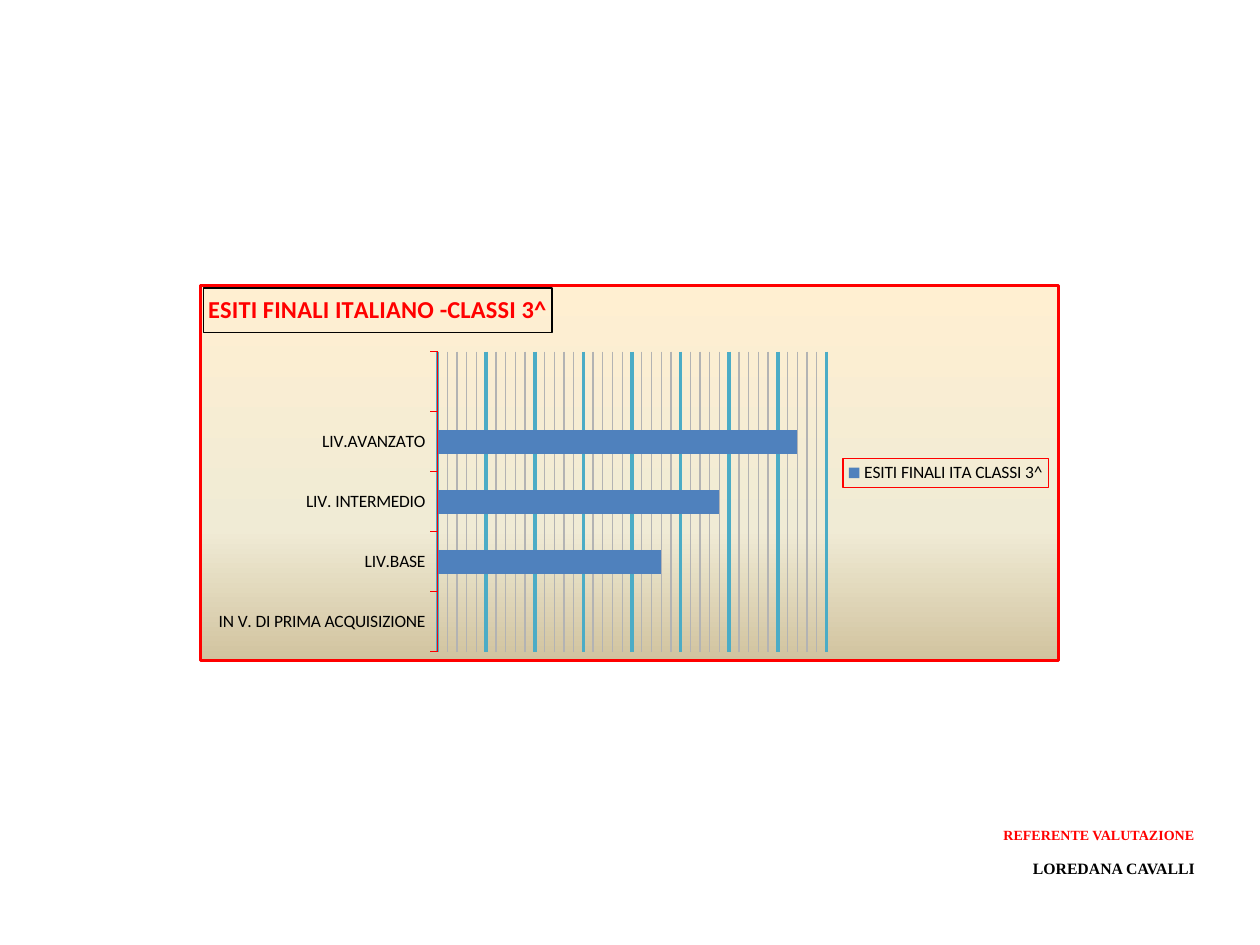
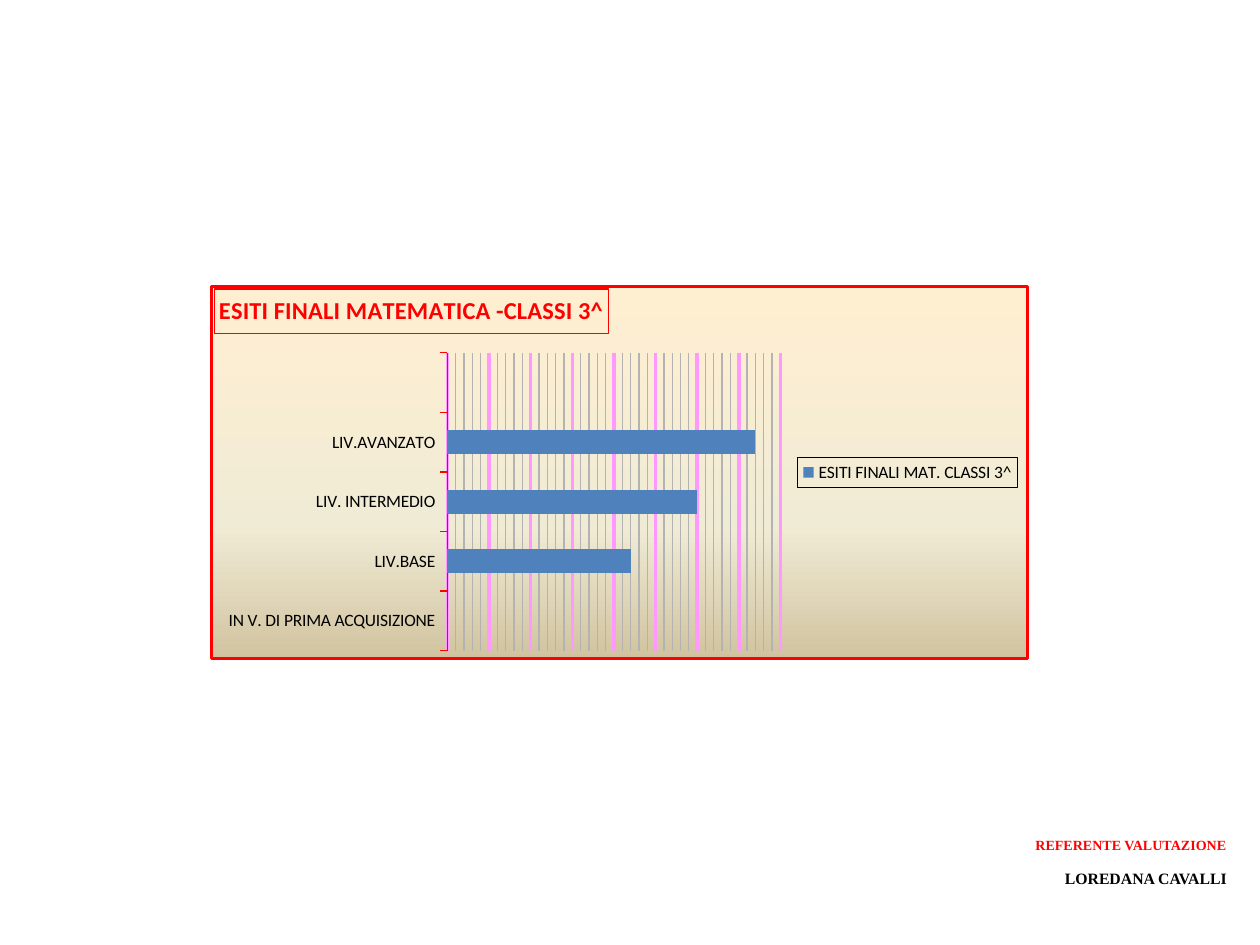
from lxml.etree import SubElement
from pptx import Presentation
from pptx.chart.data import CategoryChartData
from pptx.dml.color import RGBColor
from pptx.enum.chart import XL_CHART_TYPE, XL_LEGEND_POSITION, XL_TICK_LABEL_POSITION, XL_TICK_MARK
from pptx.enum.text import MSO_AUTO_SIZE, PP_ALIGN
from pptx.oxml import parse_xml
from pptx.oxml.ns import nsdecls, qn
from pptx.util import Emu, Pt

PX = 914400 / 126
RED = RGBColor(0xFF, 0x00, 0x00)
BLACK = RGBColor(0x00, 0x00, 0x00)
BLUE = RGBColor(0x4F, 0x81, 0xBD)
TEAL = RGBColor(0x4B, 0xAC, 0xC6)
PINK = RGBColor(0xFF, 0x99, 0xFF)
GREY = RGBColor(0xB3, 0xB3, 0xB3)
CREAM = RGBColor(0xFF, 0xEF, 0xD1)
IVORY = RGBColor(0xF0, 0xEB, 0xD5)
SAND = RGBColor(0xD1, 0xC3, 0x9F)
PANEL_STOPS = [(0, CREAM), (65, IVORY), (100, SAND)]

CHART_FONT = "Calibri"
FOOTER_FONT = "Times New Roman"
# The last, unnamed level leaves an empty row at the top
LEVELS = ["IN V. DI PRIMA ACQUISIZIONE", "LIV.BASE", "LIV. INTERMEDIO", "LIV.AVANZATO", ""]
FOOTER = [("REFERENTE VALUTAZIONE", 8, RED), ("LOREDANA CAVALLI", 9, BLACK)]


def emu(*lengths):
    return [Emu(round(length * PX)) for length in lengths]


def style_line(line, color, width):
    line.color.rgb = color
    line.width = Pt(width)


def shape_properties(fill, border, width):
    return parse_xml(
        f'<c:spPr {nsdecls("c", "a")}>{fill}<a:ln w="{Pt(width)}"><a:solidFill>'
        f'<a:srgbClr val="{border}"/></a:solidFill></a:ln></c:spPr>')


def manual_layout(parent, position, **values):
    """Place a chart part by fractions of the chart area."""
    for layout in parent.findall(qn("c:layout")):
        parent.remove(layout)
    layout = parse_xml(f'<c:layout {nsdecls("c")}><c:manualLayout/></c:layout>')
    for tag, value in values.items():
        SubElement(layout[0], qn(f"c:{tag}")).set("val", str(value))
    parent.insert(position, layout)


class Deck:
    def __init__(self):
        self.presentation = Presentation()
        self.presentation.slide_width, self.presentation.slide_height = emu(1260, 945)
        self.slide = None

    def new_slide(self):
        self.slide = self.presentation.slides.add_slide(self.presentation.slide_layouts[6])

    def results_chart(self, box, plot_box, title, series_name, values,
                      grid_color, title_border, legend_border):
        data = CategoryChartData()
        data.categories = LEVELS
        data.add_series(series_name, values + [None])
        chart = self.slide.shapes.add_chart(
            XL_CHART_TYPE.BAR_CLUSTERED, *emu(*box), data).chart
        chart.font.name, chart.font.size = CHART_FONT, Pt(10)
        chart.font.color.rgb = BLACK

        # Bars
        plot = chart.plots[0]
        plot.gap_width = 150
        plot.vary_by_categories = False
        fill = plot.series[0].format.fill
        fill.solid()
        fill.fore_color.rgb = BLUE

        # Axes and gridlines
        levels = chart.category_axis
        levels.major_tick_mark = XL_TICK_MARK.OUTSIDE
        levels.tick_label_position = XL_TICK_LABEL_POSITION.NEXT_TO_AXIS
        style_line(levels.format.line, RED, 0.75)
        scale = chart.value_axis
        scale.minimum_scale, scale.maximum_scale = 0, 40
        scale.major_unit, scale.minor_unit = 5, 1
        scale.has_major_gridlines = scale.has_minor_gridlines = True
        style_line(scale.major_gridlines.format.line, grid_color, 2)
        chart.element.find(".//" + qn("c:minorGridlines")).append(
            shape_properties("", GREY, 0.75))
        scale.visible = False

        # Title
        chart.has_title = True
        chart_title = chart.chart_title
        run = chart_title.text_frame.paragraphs[0].add_run()
        run.text = title
        run.font.name, run.font.size, run.font.bold = CHART_FONT, Pt(14), True
        run.font.color.rgb = RED
        style_line(chart_title.format.line, title_border, 0.75)
        title_element = chart.element.find(".//" + qn("c:title"))
        manual_layout(title_element, 1, xMode="edge", yMode="edge", x=0.004, y=0.007)

        # Legend
        chart.has_legend = True
        chart.legend.position = XL_LEGEND_POSITION.RIGHT
        chart.legend.include_in_layout = False
        chart.element.find(".//" + qn("c:legend")).append(
            shape_properties("", legend_border, 0.75))

        # Plot placement and panel
        left, top, width, height = box
        plot_left, plot_top, plot_width, plot_height = plot_box
        manual_layout(
            chart.element.find(".//" + qn("c:plotArea")), 0,
            layoutTarget="inner", xMode="edge", yMode="edge",
            x=(plot_left - left) / width, y=(plot_top - top) / height,
            w=plot_width / width, h=plot_height / height)
        stops = "".join(f'<a:gs pos="{percent * 1000}"><a:srgbClr val="{color}"/></a:gs>'
                        for percent, color in PANEL_STOPS)
        gradient = (f'<a:gradFill><a:gsLst>{stops}</a:gsLst>'
                    '<a:lin ang="5400000" scaled="0"/></a:gradFill>')
        chart.element.find(qn("c:chart")).addnext(shape_properties(gradient, RED, 1.5))

    def footer(self, left, top):
        frame = self.slide.shapes.add_textbox(*emu(left, top, 630, 66)).text_frame
        frame.word_wrap = True
        frame.auto_size = MSO_AUTO_SIZE.SHAPE_TO_FIT_TEXT
        for index, (text, size, color) in enumerate(FOOTER):
            paragraph = frame.add_paragraph() if index else frame.paragraphs[0]
            paragraph.alignment = PP_ALIGN.RIGHT
            paragraph.line_spacing = 1.07
            paragraph.space_after = Pt(8)
            run = paragraph.add_run()
            run.text = text
            run.font.name, run.font.size, run.font.bold = FOOTER_FONT, Pt(size), True
            run.font.color.rgb = color


def main():
    deck = Deck()

    # Italian results
    deck.new_slide()
    deck.results_chart(
        (199, 284, 861, 378), (437, 351, 390, 302),
        "ESITI FINALI ITALIANO -CLASSI 3^", "ESITI FINALI ITA CLASSI 3^",
        [0, 23, 29, 37], TEAL, title_border=BLACK, legend_border=RED)
    deck.footer(577, 819)

    # Mathematics results
    deck.new_slide()
    deck.results_chart(
        (210, 285, 819, 375), (447, 352, 334, 300),
        "ESITI FINALI MATEMATICA -CLASSI 3^", "ESITI FINALI MAT. CLASSI 3^",
        [0, 22, 30, 37], PINK, title_border=RED, legend_border=BLACK)
    deck.footer(609, 829)

    deck.presentation.save("out.pptx")


if __name__ == "__main__":
    main()
